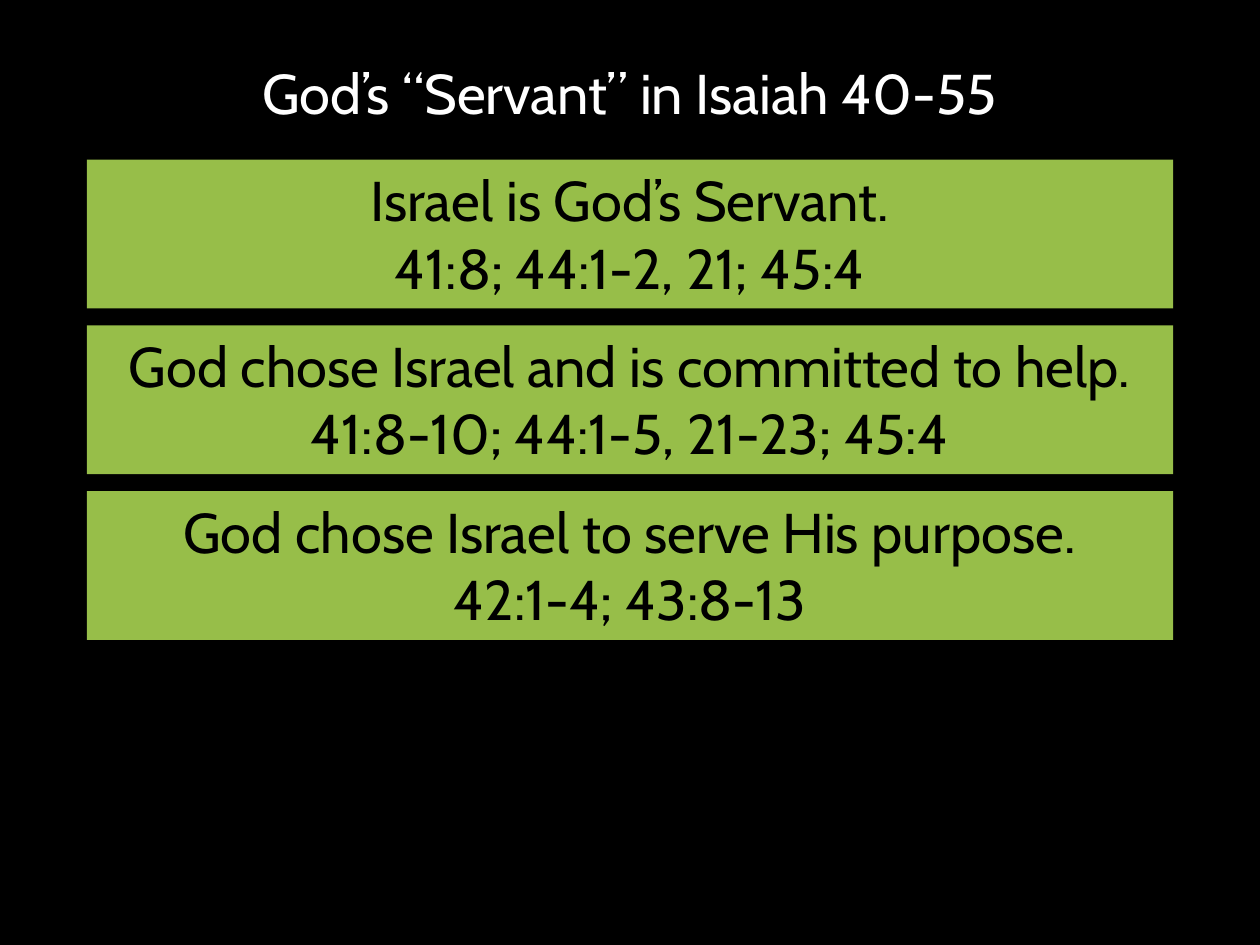
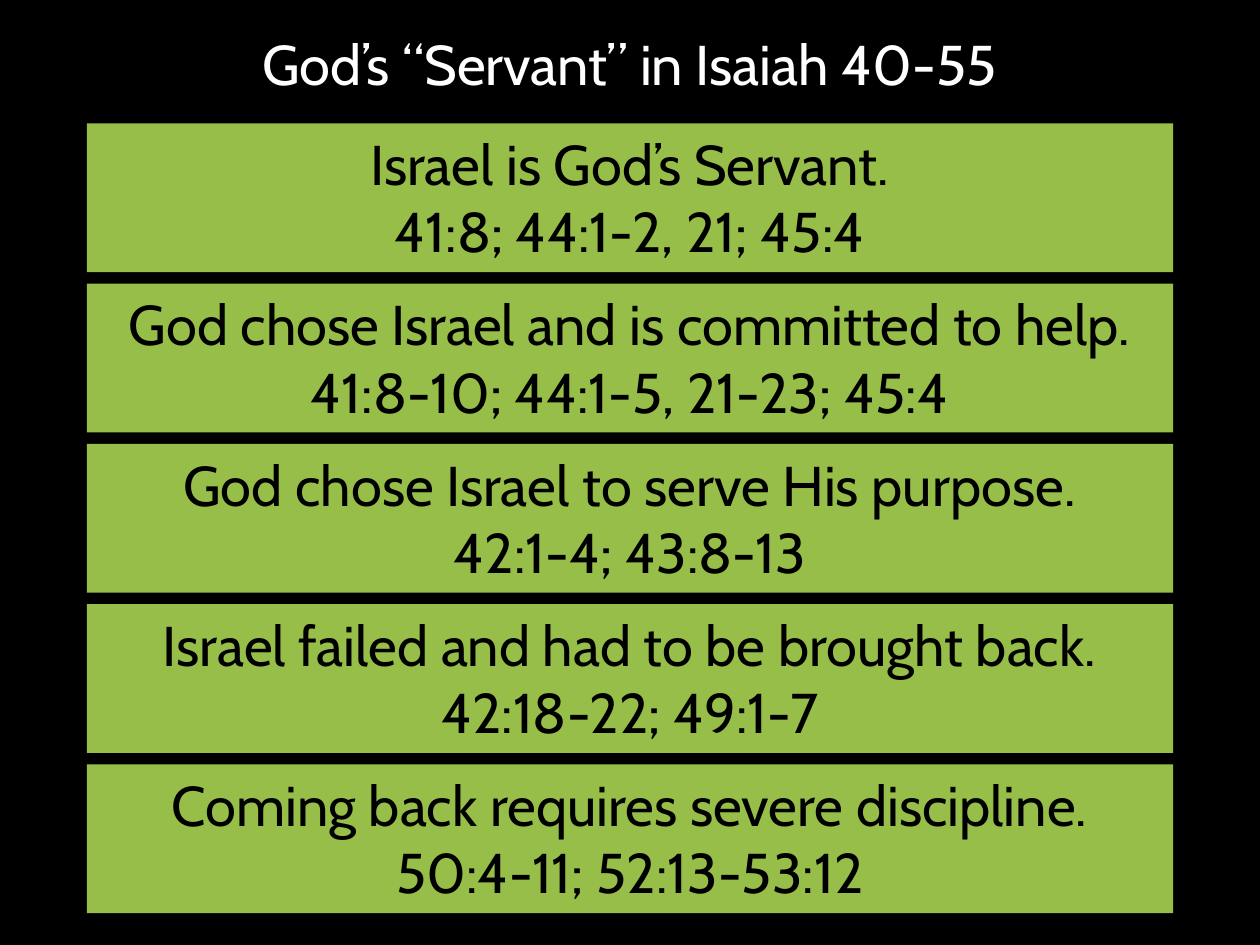
from pptx import Presentation
from pptx import util as u
from pptx.dml.color import RGBColor
from pptx.enum import shapes, text

COLORS = {"background": "000000", "title": "FFFFFF", "card": "97BE49", "card_text": "000000"}
FONT = {"name": "Cabin", "size": u.Pt(32)}
TITLE = "God’s “Servant” in Isaiah 40-55"
POINTS = [
    ("Israel is God’s Servant.", "41:8; 44:1-2, 21; 45:4"),
    ("God chose Israel and is committed to help.", "41:8-10; 44:1-5, 21-23; 45:4"),
    ("God chose Israel to serve His purpose.", "42:1-4; 43:8-13"),
    ("Israel failed and had to be brought back.", "42:18-22; 49:1-7"),
    ("Coming back requires severe discipline.", "50:4-11; 52:13-53:12"),
]

# Shared column and heights, in cm
LEFT, WIDTH = 1.75, 21.9
TITLE_HEIGHT, CARD_HEIGHT = 1.85, 3.0


def rgb(name):
    return RGBColor.from_string(COLORS[name])


def write(sp, lines, color, frame_format, line_spacing=1.0):
    tf = sp.text_frame
    for key, value in frame_format.items():
        setattr(tf, key, value)
    for i, line in enumerate(lines):
        p = tf.add_paragraph() if i else tf.paragraphs[0]
        p.alignment = text.PP_ALIGN.CENTER
        p.line_spacing = line_spacing
        r = p.add_run()
        r.text = line
        for key, value in FONT.items():
            setattr(r.font, key, value)
        r.font.color.rgb = rgb(color)


def add_title(s, left, top, width, height):
    sp = s.shapes.add_textbox(*map(u.Cm, (left, top, width, height)))
    write(sp, [TITLE], "title",
          {"word_wrap": True, "vertical_anchor": text.MSO_ANCHOR.MIDDLE}, 0.9)


def add_card(s, lines, left, top, width, height):
    sp = s.shapes.add_shape(shapes.MSO_SHAPE.RECTANGLE,
                            *map(u.Cm, (left, top, width, height)))
    sp.shadow.inherit = False
    sp.fill.solid()
    sp.fill.fore_color.rgb = rgb("card")
    sp.line.fill.background()
    write(sp, lines, "card_text",
          {"word_wrap": True, "vertical_anchor": text.MSO_ANCHOR.TOP,
           "auto_size": text.MSO_AUTO_SIZE.SHAPE_TO_FIT_TEXT})


def add_servant_slide(prs, points, title_top, cards_top, gap):
    s = prs.slides.add_slide(prs.slide_layouts[6])
    s.background.fill.solid()
    s.background.fill.fore_color.rgb = rgb("background")
    add_title(s, LEFT, title_top, WIDTH, TITLE_HEIGHT)
    # Cards stacked at an equal gap
    for i, lines in enumerate(points):
        add_card(s, lines, LEFT, cards_top + i * (CARD_HEIGHT + gap), WIDTH, CARD_HEIGHT)


def main():
    prs = Presentation()
    prs.slide_width, prs.slide_height = u.Cm(25.4), u.Cm(19.05)
    add_servant_slide(prs, POINTS[:3], title_top=1.02, cards_top=3.22, gap=0.34)
    add_servant_slide(prs, POINTS, title_top=0.43, cards_top=2.49, gap=0.23)
    prs.save("out.pptx")


if __name__ == "__main__":
    main()
